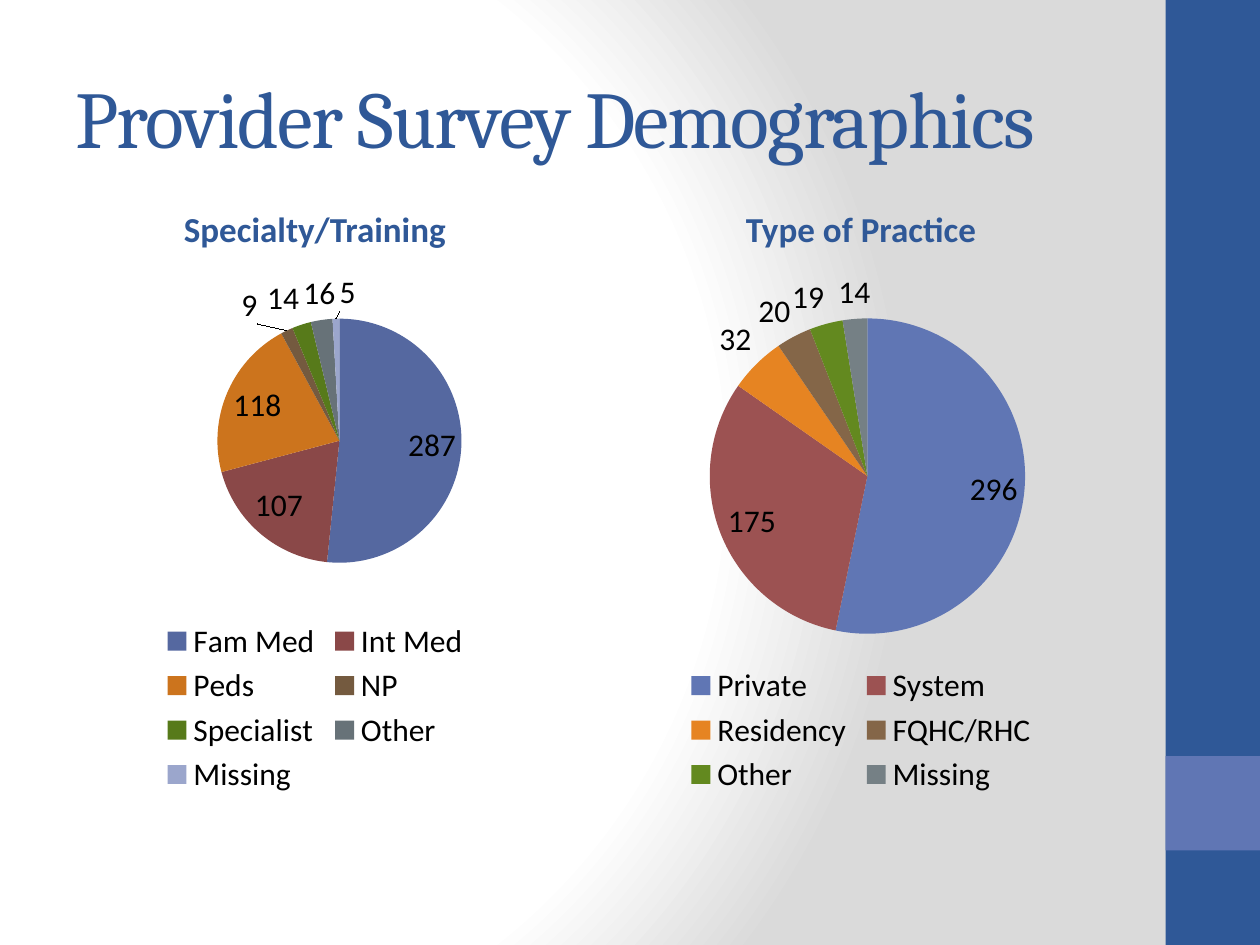
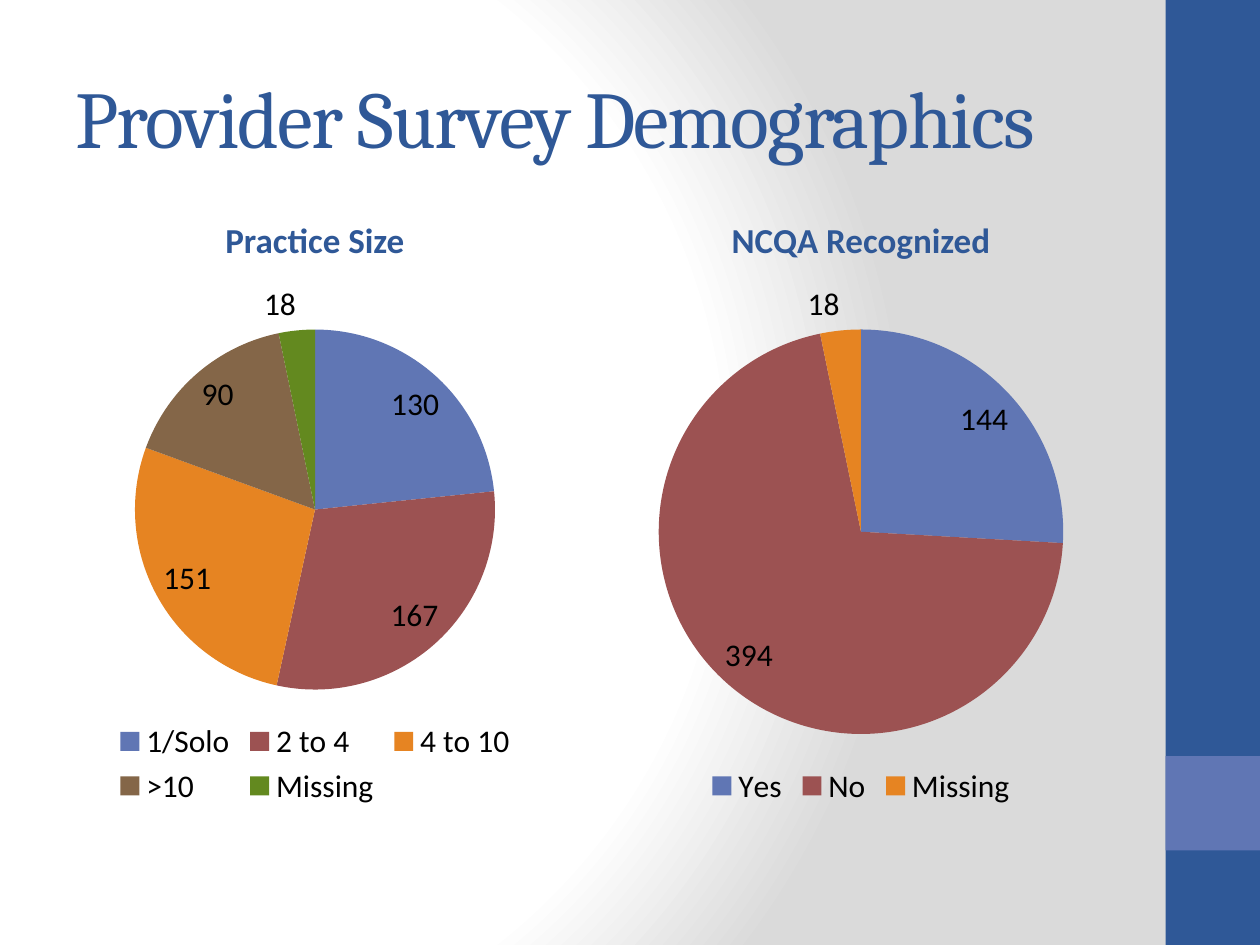
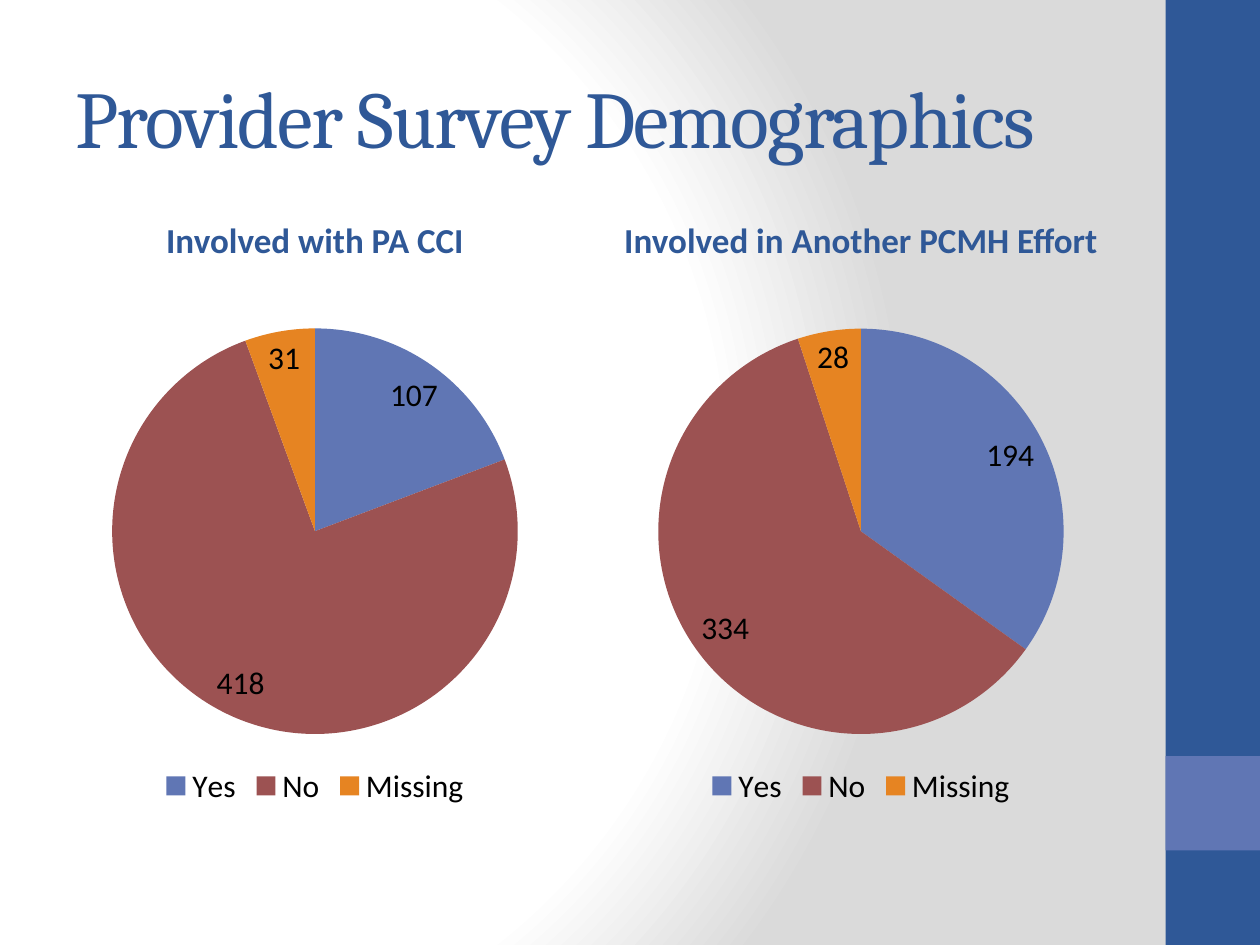
"""Build three slides of paired pie charts on provider survey demographics."""
import dataclasses

import lxml.etree
import pptx
import pptx.chart.data
import pptx.dml.color
import pptx.enum.chart
import pptx.enum.shapes
import pptx.enum.text
import pptx.oxml.ns
import pptx.util

Pt = pptx.util.Pt
RGB = pptx.dml.color.RGBColor.from_string
qn = pptx.oxml.ns.qn


@dataclasses.dataclass(frozen=True)
class Theme:
    navy: str = "2F5897"
    accent: str = "6076B4"
    ink: str = "000000"
    backdrop: tuple = ((0, "FFFFFF"), (75, "FFFFFF"), (100, "DADADA"))
    slices: tuple = ("6076B4", "9C5252", "E68422", "846648", "63891F", "758085")
    many_slices: tuple = ("5568A0", "8A4848", "CC741D", "745A3F", "577A1A", "677278", "9BA6CC")
    title_font: str = "Cambria"
    body_font: str = "Calibri"
    title_size: int = 46
    heading_size: int = 20
    chart_size: int = 18


class SurveyDeck:
    def __init__(self, theme):
        self.theme = theme
        self.deck = pptx.Presentation()
        self.deck.slide_width, self.deck.slide_height = Pt(720), Pt(540)
        self.page = None
        self.paint_backdrop()

    def paint_backdrop(self):
        fill = self.deck.slide_master.background.fill
        fill.gradient()
        gradient = fill._fill._gradFill
        for child in list(gradient):
            gradient.remove(child)
        stops = lxml.etree.SubElement(gradient, qn("a:gsLst"))
        for percent, colour in self.theme.backdrop:
            stop = lxml.etree.SubElement(stops, qn("a:gs"), pos=str(percent * 1000))
            lxml.etree.SubElement(stop, qn("a:srgbClr"), val=colour)
        circle = lxml.etree.SubElement(gradient, qn("a:path"), path="circle")
        lxml.etree.SubElement(circle, qn("a:fillToRect"), l="20000", t="50000", r="100000", b="50000")

    def add_page(self, title):
        self.page = self.deck.slides.add_slide(self.deck.slide_layouts[6])
        self.add_band(0, 540, self.theme.navy)
        self.add_band(432, 54, self.theme.accent)
        self.add_title(title)

    def add_band(self, top, height, colour):
        band = self.page.shapes.add_shape(
            pptx.enum.shapes.MSO_SHAPE.RECTANGLE, Pt(666), Pt(top), Pt(54), Pt(height))
        band.shadow.inherit = False
        band.fill.solid()
        band.fill.fore_color.rgb = RGB(colour)
        band.line.fill.background()

    def add_text(self, text, frame, anchor, font_name, size):
        box = self.page.shapes.add_textbox(*map(Pt, frame))
        box.text_frame.word_wrap = True
        box.text_frame.vertical_anchor = anchor
        box.text_frame.text = text
        para = box.text_frame.paragraphs[0]
        span = para.runs[0]
        span.font.name = font_name
        span.font.size = Pt(size)
        span.font.color.rgb = RGB(self.theme.navy)
        return para, span

    def add_title(self, text):
        para, span = self.add_text(text, (36, 21.6, 600, 90), pptx.enum.text.MSO_ANCHOR.MIDDLE,
                                   self.theme.title_font, self.theme.title_size)
        span.font._element.set("spc", "-100")

    def add_heading(self, text, left, top):
        para, span = self.add_text(text, (left, top, 288, 50.4), pptx.enum.text.MSO_ANCHOR.BOTTOM,
                                   self.theme.body_font, self.theme.heading_size)
        para.alignment = pptx.enum.text.PP_ALIGN.CENTER
        span.font.bold = True

    def add_pie(self, counts, left, top):
        data = pptx.chart.data.CategoryChartData()
        data.categories = list(counts)
        data.add_series("Series 1", list(counts.values()))
        chart = self.page.shapes.add_chart(
            pptx.enum.chart.XL_CHART_TYPE.PIE, Pt(left), Pt(top), Pt(288), Pt(311), data).chart
        chart.font.name = self.theme.body_font
        chart.font.size = Pt(self.theme.chart_size)
        chart.font.color.rgb = RGB(self.theme.ink)
        chart.has_title = False
        chart.has_legend = True
        chart.legend.position = pptx.enum.chart.XL_LEGEND_POSITION.BOTTOM
        chart.legend.include_in_layout = False
        plot = chart.plots[0]
        plot.vary_by_categories = True
        plot.has_data_labels = True
        plot.data_labels.show_value = True
        plot.data_labels.show_percentage = False
        few = len(counts) <= len(self.theme.slices)
        palette = self.theme.slices if few else self.theme.many_slices
        for index, colour in enumerate(palette[:len(counts)]):
            fill = plot.series[0].points[index].format.fill
            fill.solid()
            fill.fore_color.rgb = RGB(colour)

    def add_pie_pair(self, pies, top):
        for column, (heading, counts) in enumerate(pies.items()):
            left = 36 + 312 * column
            self.add_heading(heading, left, top)
            self.add_pie(counts, left, top + 50.4)


SURVEY_PAGES = (
    (95.76, {
        "Specialty/Training": {"Fam Med": 287, "Int Med": 107, "Peds": 118, "NP": 9,
                               "Specialist": 14, "Other": 16, "Missing": 5},
        "Type of Practice": {"Private": 296, "System": 175, "Residency": 32,
                             "FQHC/RHC": 20, "Other": 19, "Missing": 14},
    }),
    (102.24, {
        "Practice Size": {"1/Solo": 130, "2 to 4": 167, "4 to 10": 151, ">10": 90, "Missing": 18},
        "NCQA Recognized": {"Yes": 144, "No": 394, "Missing": 18},
    }),
    (102.24, {
        "Involved with PA CCI": {"Yes": 107, "No": 418, "Missing": 31},
        "Involved in Another PCMH Effort": {"Yes": 194, "No": 334, "Missing": 28},
    }),
)


def main():
    survey = SurveyDeck(Theme())
    for top, pies in SURVEY_PAGES:
        survey.add_page("Provider Survey Demographics")
        survey.add_pie_pair(pies, top)
    survey.deck.save("out.pptx")


if __name__ == "__main__":
    main()
